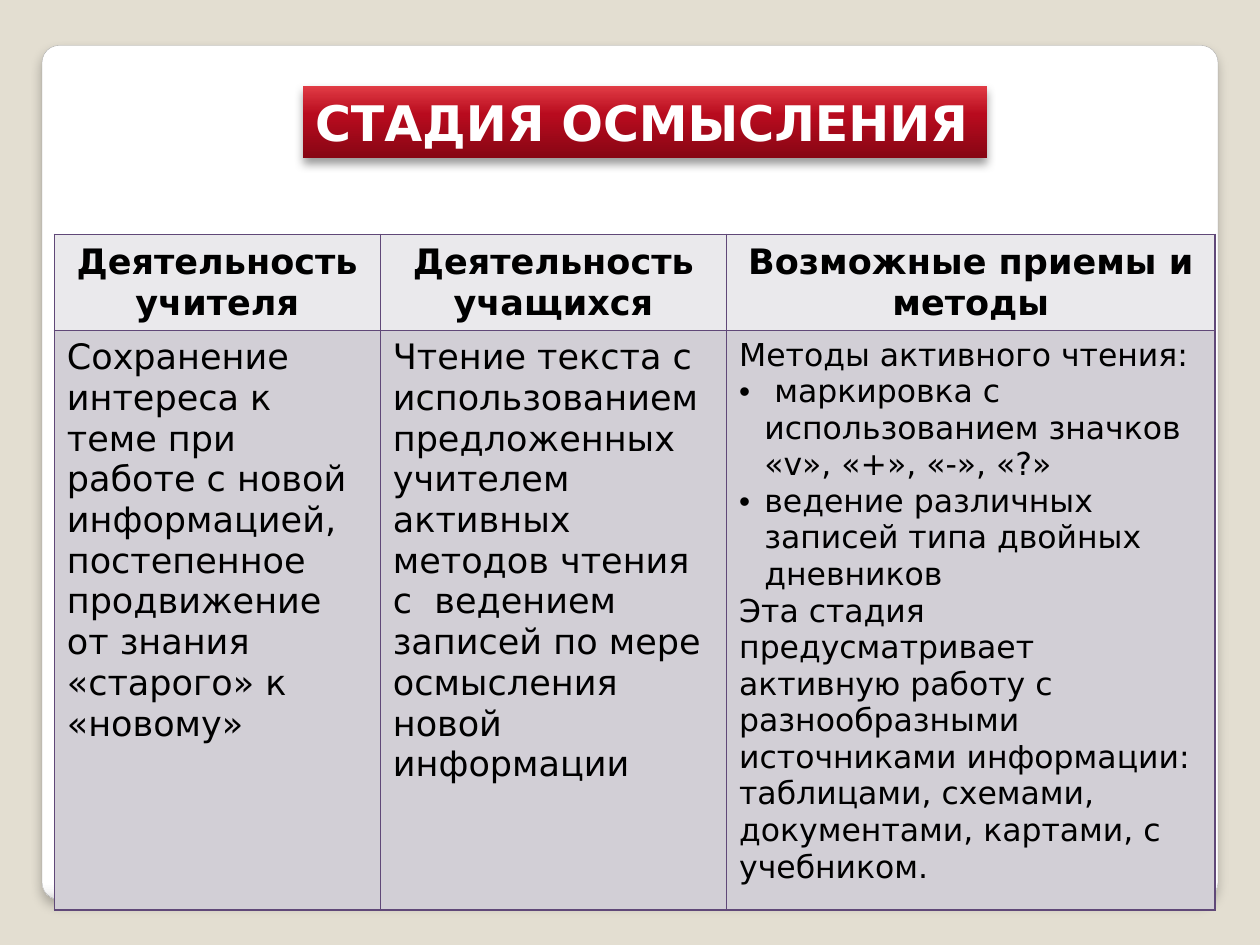
import pptx
import pptx.util
import pptx.dml.color
import pptx.enum.shapes
import pptx.enum.text
import pptx.oxml
import pptx.oxml.ns

Pt = pptx.util.Pt
FONT = "DejaVu Sans"
TITLE = "СТАДИЯ ОСМЫСЛЕНИЯ"
HEADERS = ["Деятельность учителя", "Деятельность учащихся", "Возможные приемы и методы"]
TEACHER = [
    ("Сохранение интереса к теме при  работе с новой информацией, "
     "постепенное продвижение от знания «старого» к «новому»", False),
]
STUDENTS = [
    ("Чтение текста с  использованием  предложенных учителем активных методов чтения "
     "с  ведением записей по мере осмысления новой информации", False),
]
METHODS = [
    ("Методы активного чтения:", False),
    (" маркировка с использованием значков «v», «+», «-», «?»", True),
    ("ведение различных записей типа двойных дневников", True),
    ("Эта стадия предусматривает активную работу с разнообразными источниками информации: "
     "таблицами, схемами, документами, картами, с учебником.", False),
]
BODY = [(TEACHER, 20), (STUDENTS, 20), (METHODS, 18)]

COLUMN_WIDTHS = [186.3, 197.9, 279.2]
ROW_HEIGHTS = [55, 331]
TABLE_LEFT, TABLE_TOP = 31, 134
PANEL_STOPS = [(0, "FFFFFF"), (98, "FFFFFF"), (99, "F7F7F7"), (100, "DADADA")]
TITLE_STOPS = [(0, "870614"), (60, "B80B1E"), (100, "E13C45")]


def color(value):
    return pptx.dml.color.RGBColor.from_string(value)


def element(markup):
    name, rest = markup.split(" ", 1)
    namespace = pptx.oxml.ns.nsdecls("a")
    return pptx.oxml.parse_xml(f"<{name} {namespace} {rest}")


def add_panel(slide, kind, box, stops, angle, shadow):
    shape = slide.shapes.add_shape(kind, *[Pt(length) for length in box])
    shape.fill.gradient()
    gradient = shape._element.spPr.find(pptx.oxml.ns.qn("a:gradFill"))
    marks = "".join(
        f'<a:gs pos="{position * 1000}"><a:srgbClr val="{value}"/></a:gs>'
        for position, value in stops)
    gradient.getparent().replace(gradient, element(
        f'a:gradFill rotWithShape="1"><a:gsLst>{marks}</a:gsLst>'
        f'<a:lin ang="{angle * 60000}" scaled="0"/></a:gradFill>'))
    shape.line.fill.background()
    shape.shadow.inherit = False
    opacity, blur, distance = shadow
    shape._element.spPr.find(pptx.oxml.ns.qn("a:effectLst")).append(element(
        f'a:outerShdw blurRad="{Pt(blur)}" dist="{Pt(distance)}" dir="5400000" rotWithShape="0">'
        f'<a:srgbClr val="000000"><a:alpha val="{opacity * 1000}"/></a:srgbClr></a:outerShdw>'))
    return shape


def style(paragraph, size, value, bold, alignment):
    paragraph.alignment = alignment
    paragraph.font.name = FONT
    paragraph.font.size = Pt(size)
    paragraph.font.bold = bold
    paragraph.font.color.rgb = color(value)


def add_bullet(paragraph):
    properties = paragraph._p.get_or_add_pPr()
    properties.set("marL", str(Pt(14.4)))
    properties.set("indent", str(Pt(-14.4)))
    bullet = [
        'a:buClr ><a:srgbClr val="000000"/></a:buClr>',
        'a:buFont typeface="Arial"/>',
        'a:buChar char="•"/>',
    ]
    for index, markup in enumerate(bullet):
        properties.insert(index, element(markup))


def fill_cell(cell, paragraphs, size, background, bold, alignment):
    for side in ("lnL", "lnR", "lnT", "lnB"):
        cell._tc.get_or_add_tcPr().append(element(
            f'a:{side} w="{Pt(1)}"><a:solidFill><a:srgbClr val="604878"/></a:solidFill></a:{side}>'))
    cell.fill.solid()
    cell.fill.fore_color.rgb = color(background)
    frame = cell.text_frame
    for index, (text, bulleted) in enumerate(paragraphs):
        paragraph = frame.add_paragraph() if index else frame.paragraphs[0]
        paragraph.text = text
        style(paragraph, size, "000000", bold, alignment)
        if bulleted:
            add_bullet(paragraph)


def add_stage_table(slide):
    table = slide.shapes.add_table(
        len(ROW_HEIGHTS), len(COLUMN_WIDTHS), Pt(TABLE_LEFT), Pt(TABLE_TOP),
        Pt(sum(COLUMN_WIDTHS)), Pt(sum(ROW_HEIGHTS))).table
    table.first_row = False
    table.horz_banding = False
    for row, height in zip(table.rows, ROW_HEIGHTS):
        row.height = Pt(height)
    align = pptx.enum.text.PP_ALIGN
    for index, (header, (paragraphs, size)) in enumerate(zip(HEADERS, BODY)):
        table.columns[index].width = Pt(COLUMN_WIDTHS[index])
        header_cell = table.cell(0, index)
        fill_cell(header_cell, [(header, False)], 20, "EAE9EC", True, align.CENTER)
        header_cell.vertical_anchor = pptx.enum.text.MSO_ANCHOR.MIDDLE
        fill_cell(table.cell(1, index), paragraphs, size, "D2CFD6", False, align.LEFT)


def main():
    presentation = pptx.Presentation()
    presentation.slide_width, presentation.slide_height = Pt(720), Pt(540)
    slide = presentation.slides.add_slide(presentation.slide_layouts[6])
    slide.background.fill.solid()
    slide.background.fill.fore_color.rgb = color("E3DED1")
    shapes = pptx.enum.shapes.MSO_SHAPE

    panel = add_panel(slide, shapes.ROUNDED_RECTANGLE, (24, 26, 672, 488),
                      PANEL_STOPS, 90, (25, 6, 4))
    panel.adjustments[0] = 0.02
    panel.line.color.rgb = color("A4A4A4")
    panel.line.width = Pt(0.16)

    title = add_panel(slide, shapes.RECTANGLE, (173, 49, 391, 41.2),
                      TITLE_STOPS, 270, (40, 5.2, 3))
    title.text_frame.word_wrap = True
    title.text_frame.text = TITLE
    style(title.text_frame.paragraphs[0], 28, "FFFFFF", True, pptx.enum.text.PP_ALIGN.LEFT)

    add_stage_table(slide)
    presentation.save("out.pptx")


if __name__ == "__main__":
    main()
